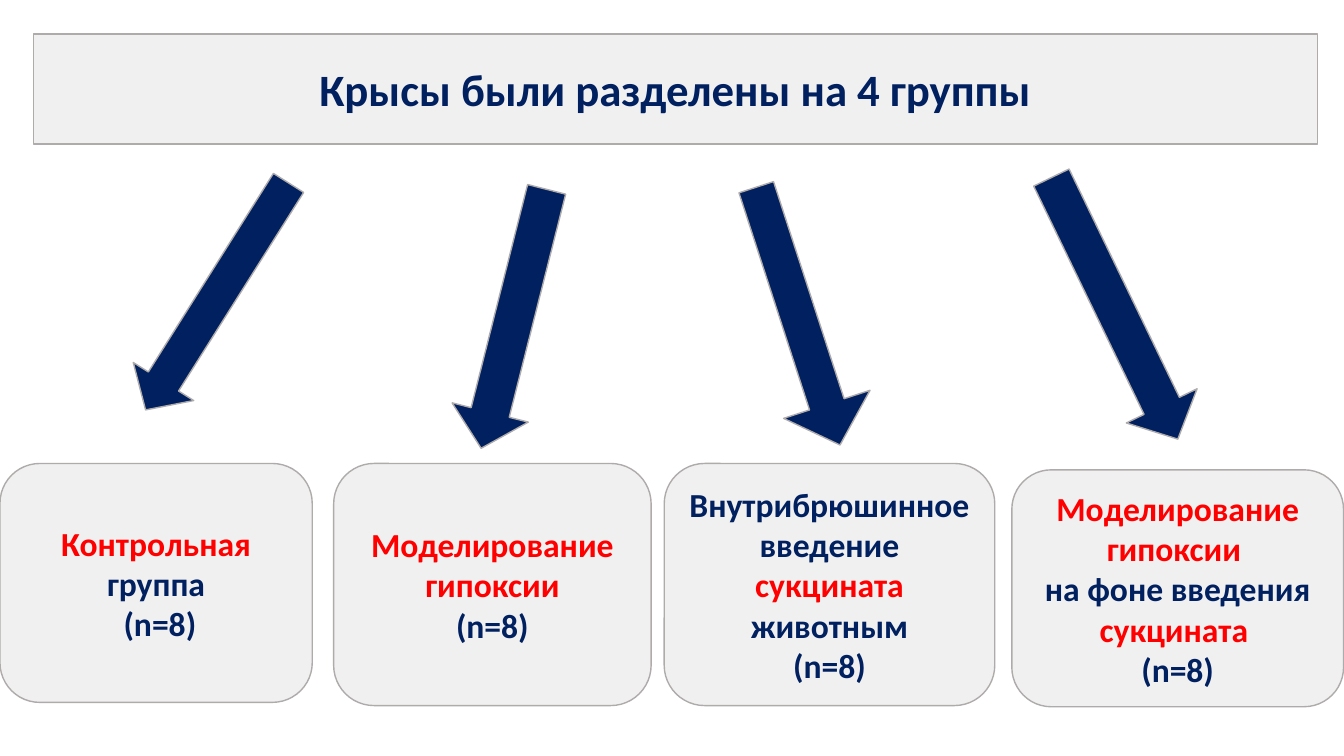
from dataclasses import dataclass

from lxml import etree
from pptx import Presentation
from pptx import util as u
from pptx.dml.color import RGBColor
from pptx.enum import shapes, text
from pptx.oxml import ns

NAVY = RGBColor(0x00, 0x20, 0x60)
RED = RGBColor(0xFF, 0x00, 0x00)
PALE = RGBColor(0xF1, 0xF0, 0xF0)
GREY = RGBColor(0xAF, 0xAB, 0xAB)
FONT = "Calibri"

Run = tuple[str, RGBColor]
Lines = list[list[Run]]


@dataclass
class Arrow:
    """Sizes in centimetres, turn in degrees, shaft as a share of width."""
    left: float
    top: float
    width: float
    height: float
    turn: float
    shaft: float = 0.5


@dataclass
class Group:
    """Sizes in centimetres; each line is a paragraph of coloured runs."""
    left: float
    top: float
    width: float
    height: float
    lines: Lines


COUNT: Run = ("(n=8)", NAVY)

ARROWS = [
    Arrow(4.57, 4.09, 1.8, 6.76, 32.2),
    Arrow(11.96, 4.67, 1.98, 6.73, 14.2),
    Arrow(18.97, 4.55, 2.29, 6.83, -18, 0.4),
    Arrow(27.1, 4.11, 1.98, 7.32, -25.8),
]

GROUPS = [
    Group(0, 11.68, 7.87, 6.02, [
        [("Контрольная ", RED), ("группа", NAVY)],
        [(" (n=8)", NAVY)],
    ]),
    Group(8.41, 11.68, 8, 6.1, [
        [("Моделирование гипоксии", RED)],
        [COUNT],
    ]),
    Group(16.74, 11.68, 8.33, 6.1, [
        [("Внутрибрюшинное введение ", NAVY), ("сукцината ", RED),
         ("животным", NAVY)],
        [COUNT],
    ]),
    Group(25.5, 11.84, 8.36, 5.97, [
        [("Моделирование гипоксии ", RED)],
        [("на фоне введения ", NAVY), ("сукцината ", RED)],
        [COUNT],
    ]),
]


def paint(shape, fill: RGBColor) -> None:
    shape.fill.solid()
    shape.fill.fore_color.rgb = fill
    shape.line.color.rgb = GREY
    shape.line.width = u.Pt(1)


def write(shape, lines: Lines, size: int) -> None:
    frame = shape.text_frame
    frame.word_wrap = True
    frame.auto_size = text.MSO_AUTO_SIZE.NONE
    frame.vertical_anchor = text.MSO_ANCHOR.MIDDLE
    for i, line in enumerate(lines):
        para = frame.add_paragraph() if i else frame.paragraphs[0]
        para.alignment = text.PP_ALIGN.CENTER
        for words, color in line:
            run = para.add_run()
            run.text = words
            run.font.name = FONT
            run.font.size = u.Pt(size)
            run.font.bold = True
            run.font.color.rgb = color


def add_form(slide, kind, item: Arrow | Group, fill: RGBColor):
    shape = slide.shapes.add_shape(
        kind, u.Cm(item.left), u.Cm(item.top),
        u.Cm(item.width), u.Cm(item.height))
    shape.shadow.inherit = False
    paint(shape, fill)
    return shape


def add_title(slide) -> None:
    title = slide.shapes.title
    title.left, title.top = u.Cm(0.84), u.Cm(0.86)
    title.width, title.height = u.Cm(32.36), u.Cm(2.77)
    # Rounded outline for the placeholder
    geom = etree.SubElement(title.element.spPr, ns.qn("a:prstGeom"),
                            prst="roundRect")
    etree.SubElement(geom, ns.qn("a:avLst"))
    paint(title, PALE)
    write(title, [[("Крысы были разделены на 4 группы", NAVY)]], 32)


def add_arrow(slide, item: Arrow) -> None:
    arrow = add_form(slide, shapes.MSO_SHAPE.DOWN_ARROW, item, NAVY)
    arrow.rotation = item.turn
    arrow.adjustments[0] = item.shaft
    arrow.adjustments[1] = 0.47


def add_group(slide, item: Group) -> None:
    box = add_form(slide, shapes.MSO_SHAPE.ROUNDED_RECTANGLE, item, PALE)
    write(box, item.lines, 24)


def main() -> None:
    deck = Presentation()
    deck.slide_width, deck.slide_height = u.Cm(33.87), u.Cm(19.05)
    slide = deck.slides.add_slide(deck.slide_layouts.get_by_name("Title Only"))

    # Heading
    add_title(slide)

    # Arrows down to the groups
    for arrow in ARROWS:
        add_arrow(slide, arrow)

    # Four groups
    for group in GROUPS:
        add_group(slide, group)

    deck.save("out.pptx")


if __name__ == "__main__":
    main()
